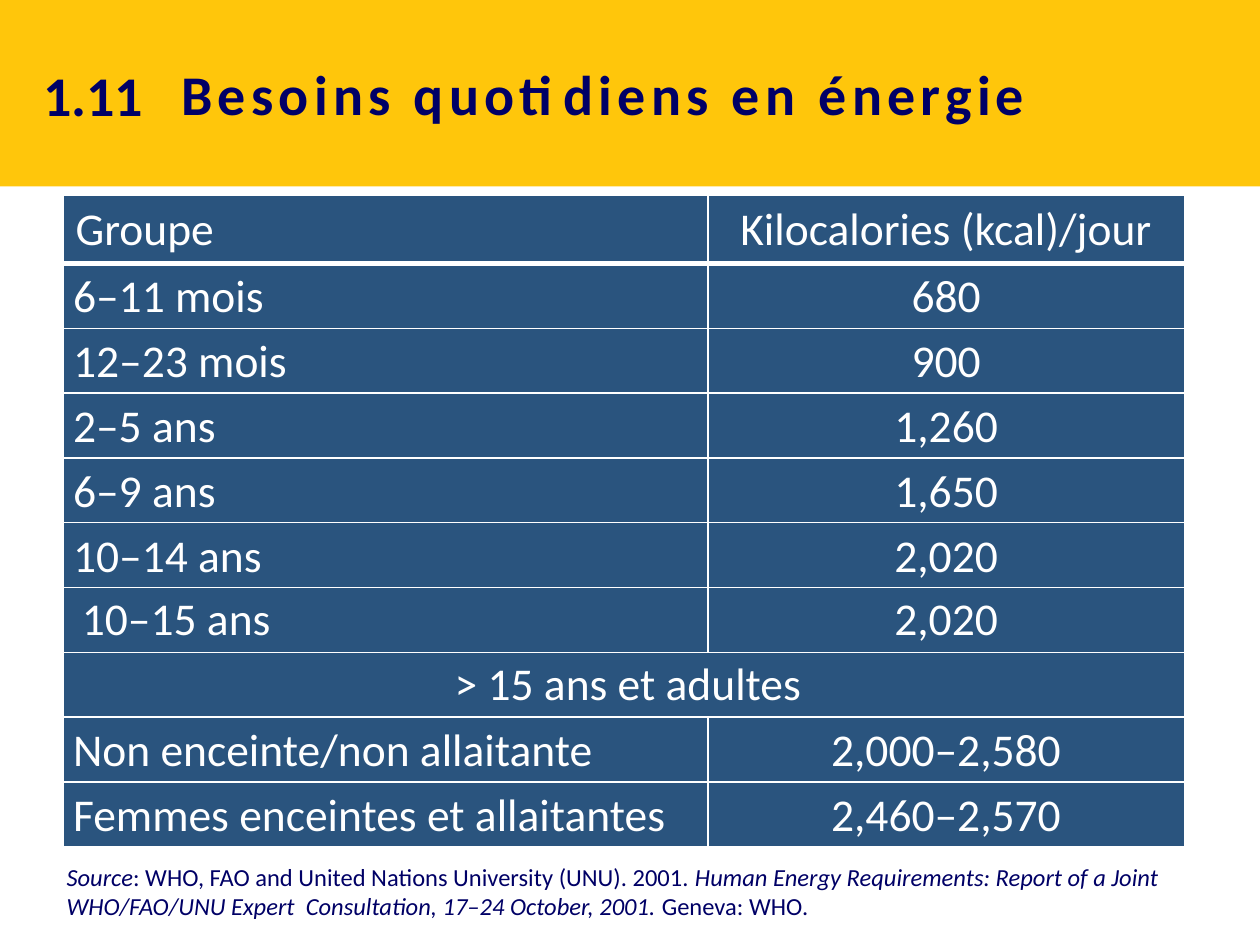
import dataclasses

import lxml.etree
import pptx
import pptx.dml.color
import pptx.enum.shapes
import pptx.enum.text
import pptx.oxml.ns
import pptx.util

Inches = pptx.util.Inches
Pt = pptx.util.Pt
Align = pptx.enum.text.PP_ALIGN
Anchor = pptx.enum.text.MSO_ANCHOR


@dataclasses.dataclass(frozen=True)
class Theme:
    font: str = "Calibri"
    band: str = "FFC60B"
    navy: str = "000066"
    cell: str = "2A547E"
    white: str = "FFFFFF"
    title_size: int = 32
    table_size: int = 26
    source_size: int = 14


theme = Theme()


def color(value):
    return pptx.dml.color.RGBColor.from_string(value)


def add_text(para, text, *, size, ink, bold=False, italic=False, spacing=0):
    span = para.add_run()
    span.text = text
    span.font.name = theme.font
    span.font.size = Pt(size)
    span.font.bold = bold
    span.font.italic = italic
    span.font.color.rgb = color(ink)
    if spacing:
        span._r.get_or_add_rPr().set("spc", str(spacing * 100))


deck = pptx.Presentation()
deck.slide_width = Inches(10)
deck.slide_height = Inches(7.5)
page = deck.slides.add_slide(deck.slide_layouts[6])

# Title band
band = page.shapes.add_shape(
    pptx.enum.shapes.MSO_SHAPE.RECTANGLE, 0, 0, Inches(10), Inches(1.48))
band.shadow.inherit = False
band.fill.solid()
band.fill.fore_color.rgb = color(theme.band)
band.line.fill.background()

# Energy table
rows = [
    ("Groupe", "Kilocalories (kcal)/jour"),
    ("6–11 mois", "680"),
    ("12–23 mois", "900"),
    ("2–5 ans", "1,260"),
    ("6–9 ans", "1,650"),
    ("10–14 ans", "2,020"),
    ("10–15 ans", "2,020"),
    ("> 15 ans et adultes", ""),
    ("Non enceinte/non allaitante", "2,000–2,580"),
    ("Femmes enceintes et allaitantes", "2,460–2,570"),
]
header_row, indented_row, merged_row = 0, 6, 7
frame = page.shapes.add_table(
    len(rows), 2, Inches(0.5), Inches(1.55), Inches(8.9), Inches(5.17))
table = frame.table
table.first_row = False
table.horz_banding = False
for column, width in zip(table.columns, (5.12, 3.78)):
    column.width = Inches(width)
for number, row in enumerate(table.rows):
    row.height = Inches(0.54 if number == header_row else 4.63 / 9)
table.cell(merged_row, 0).merge(table.cell(merged_row, 1))

for number, texts in enumerate(rows):
    for side, text in enumerate(texts):
        cell = table.cell(number, side)
        cell.vertical_anchor = Anchor.MIDDLE
        if number == header_row:
            left, top, bottom = 0.1, 0.05, 0.05
        elif number in (indented_row, merged_row):
            left, top, bottom = (0.08 if side else 0.15), 0, 0
        else:
            left, top, bottom = 0.08, 0.04, 0.02
        cell.margin_left = Inches(left)
        cell.margin_right = Inches(0.1 if number == header_row else 0.08)
        cell.margin_top = Inches(top)
        cell.margin_bottom = Inches(bottom)

        # White rules, placed ahead of the fill
        properties = cell._tc.get_or_add_tcPr()
        for edge in ("lnL", "lnR", "lnT", "lnB"):
            thick = number == header_row and edge == "lnB"
            rule = lxml.etree.SubElement(
                properties, pptx.oxml.ns.qn(f"a:{edge}"), w=str(Pt(3 if thick else 1)))
            fill = lxml.etree.SubElement(rule, pptx.oxml.ns.qn("a:solidFill"))
            lxml.etree.SubElement(
                fill, pptx.oxml.ns.qn("a:srgbClr"), val=theme.white)
        cell.fill.solid()
        cell.fill.fore_color.rgb = color(theme.cell)

        if text:
            para = cell.text_frame.paragraphs[0]
            centered = side == 1 or number == merged_row
            para.alignment = Align.CENTER if centered else Align.LEFT
            add_text(para, text, size=theme.table_size, ink=theme.white)

# Source note, title and section number
title_format = dict(size=theme.title_size, ink=theme.navy, bold=True)
source_format = dict(size=theme.source_size, ink=theme.navy)
boxes = [
    ((0.43, 6.79, 9.1, 0.57), True, Align.LEFT, Anchor.TOP, [
        ("Source", dict(source_format, italic=True)),
        (": WHO, FAO and United Nations University (UNU). 2001. ", source_format),
        ("Human Energy Requirements: Report of a Joint WHO/FAO/UNU Expert  "
         "Consultation, 17–24 October, 2001. ", dict(source_format, italic=True)),
        ("Geneva: WHO.", source_format),
    ]),
    ((1.34, 0.44, 8.76, 0.6), True, Align.LEFT, Anchor.MIDDLE, [
        ("Besoins quotidiens en énergie", dict(title_format, spacing=3)),
    ]),
    ((0.24, 0.43, 1, 0.64), False, Align.CENTER, Anchor.TOP, [
        ("1.11", title_format),
    ]),
]
for place, wrap, alignment, anchor, spans in boxes:
    box = page.shapes.add_textbox(*map(Inches, place))
    box.text_frame.word_wrap = wrap
    box.text_frame.vertical_anchor = anchor
    para = box.text_frame.paragraphs[0]
    para.alignment = alignment
    for text, style in spans:
        add_text(para, text, **style)

deck.save("out.pptx")
